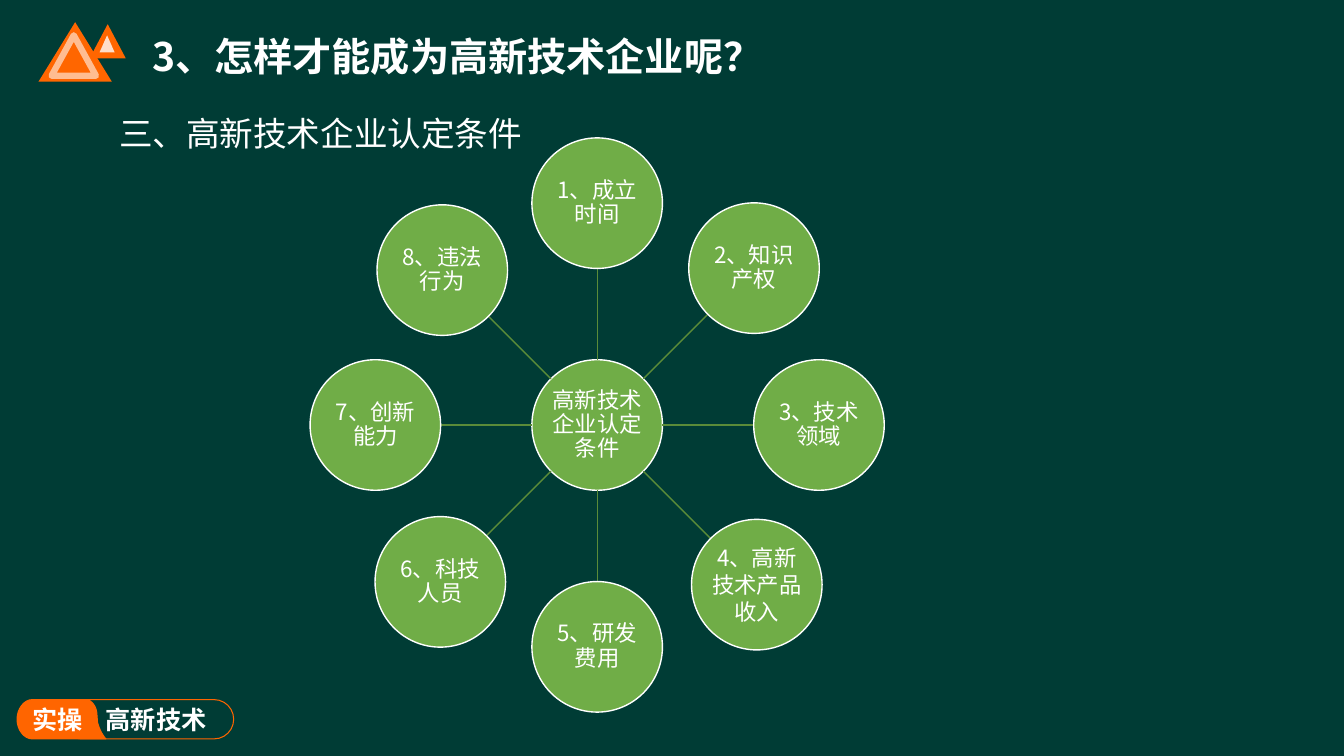
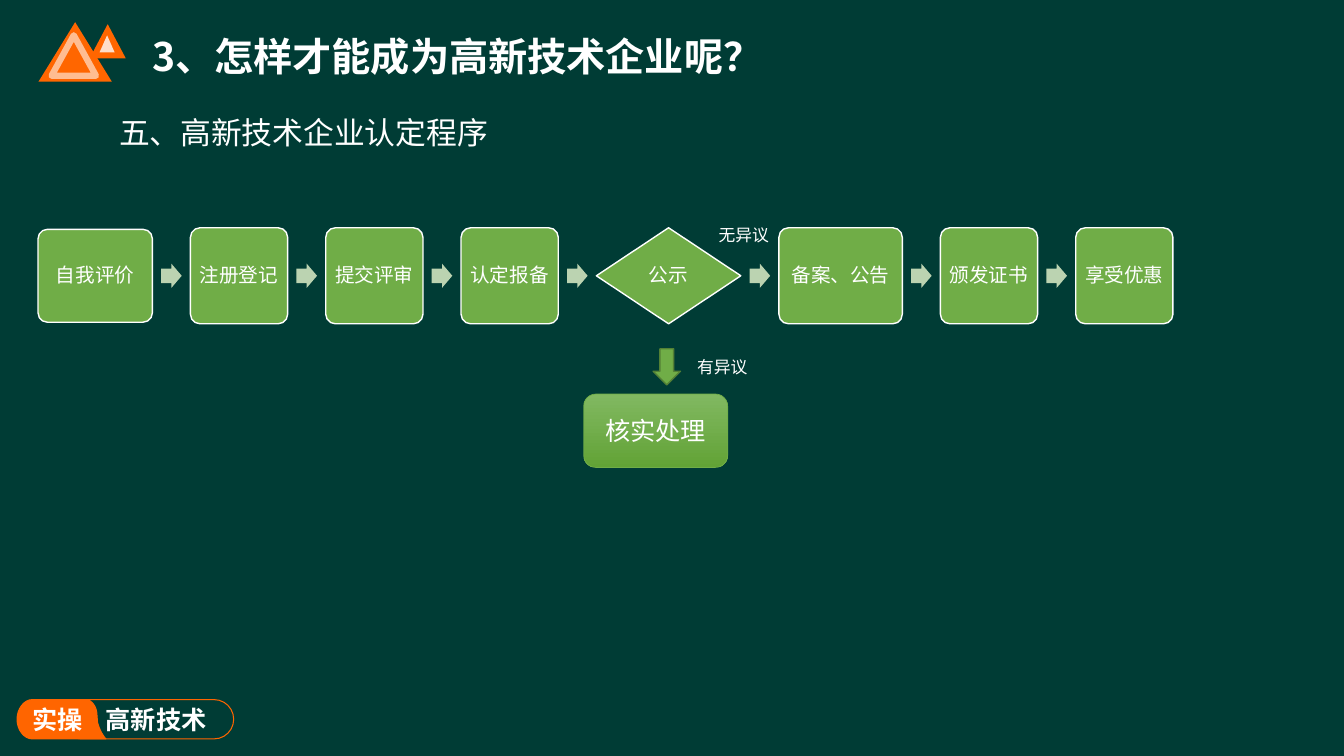
"""Build two slides on the recognition of high-tech enterprises."""
from dataclasses import dataclass
from math import cos, radians, sin

from lxml import etree
from pptx import Presentation
from pptx.dml.color import RGBColor
from pptx.enum.shapes import MSO_CONNECTOR, MSO_SHAPE
from pptx.enum.text import MSO_ANCHOR, MSO_AUTO_SIZE, PP_ALIGN
from pptx.oxml.ns import qn
from pptx.util import Cm, Pt

STRAIGHT = MSO_CONNECTOR.STRAIGHT
TRIANGLE = MSO_SHAPE.FLOWCHART_EXTRACT
ROUNDED = MSO_SHAPE.ROUNDED_RECTANGLE
ELLIPSE = MSO_SHAPE.OVAL
DIAMOND = MSO_SHAPE.DIAMOND
RIGHT_ARROW = MSO_SHAPE.RIGHT_ARROW
DOWN_ARROW = MSO_SHAPE.DOWN_ARROW
MIDDLE, TOP = MSO_ANCHOR.MIDDLE, MSO_ANCHOR.TOP
LEFT, CENTER = PP_ALIGN.LEFT, PP_ALIGN.CENTER
NO_AUTOFIT = MSO_AUTO_SIZE.NONE
TITLE_ONLY = 5


@dataclass(frozen=True)
class Theme:
    """Colours, font and type sizes of the deck."""
    background: str = "003C35"
    white: str = "FFFFFF"
    badge: str = "FF6500"
    emblem: str = "FF6600"
    green: str = "70AD47"
    spoke: str = "5A8B39"
    step_arrow: str = "BBD3B1"
    arrow_edge: str = "538035"
    review_top: str = "81B861"
    review_bottom: str = "62A336"
    font: str = "Noto Sans CJK SC"
    title: int = 28
    badge_text: int = 18
    review_text: int = 18
    condition_text: int = 16
    step_text: int = 14
    note_text: int = 12


@dataclass(frozen=True)
class Box:
    """Position and size in centimetres."""
    left: float
    top: float
    width: float
    height: float


@dataclass(frozen=True)
class Condition:
    """One circle around the hub."""
    label: str
    orbit: float = 5.59
    line_spacing: float = 0.9


@dataclass(frozen=True)
class Step:
    """One stage of the recognition procedure."""
    label: str
    width: float = 2.45
    height: float = 2.42
    outline: MSO_SHAPE = ROUNDED


THEME = Theme()
TITLE = "3、怎样才能成为高新技术企业呢？"
HUB_LABEL = "高新技术企业认定条件"
HUB_X, HUB_Y, CIRCLE = 15.05, 10.71, 3.29
CONDITIONS = (
    Condition("1、成立时间"),
    Condition("2、知识产权"),
    Condition("3、技术领域"),
    Condition("4、高新技术产品收入", 5.69, 1.0),
    Condition("5、研发费用"),
    Condition("6、科技人员"),
    Condition("7、创新能力"),
    Condition("8、违法行为", 5.52),
)
STEPS = (
    Step("自我评价", 2.88, 2.34),
    Step("注册登记"),
    Step("提交评审"),
    Step("认定报备"),
    Step("公示", 3.64, outline=DIAMOND),
    Step("备案、公告", 3.11),
    Step("颁发证书"),
    Step("享受优惠"),
)
STEP_START, STEP_GAP, STEP_MIDDLE = 0.96, 0.96, 6.95
STEP_ARROW_WIDTH, STEP_ARROW_HEIGHT = 0.52, 0.61
BADGE_START = (2.46, 18.21)
BADGE_CURVES = (
    ((2.44, 18.03), (2.46, 17.88), (2.36, 17.75)),
    ((2.31, 17.68), (2.24, 17.63), (2.18, 17.63)),
    ((0.81, 17.63),),
    ((0.61, 17.63), (0.43, 17.86), (0.43, 18.13)),
    ((0.43, 18.39), (0.61, 18.62), (0.81, 18.62)),
    ((2.67, 18.62),),
    ((2.54, 18.47), (2.49, 18.31), (2.46, 18.21)),
)


def rgb(colour: str) -> RGBColor:
    """Turn a hex string into a colour."""
    return RGBColor.from_string(colour)


def paint(shape, fill: str | None, line: str | None = None, width: float = 1) -> None:
    """Set fill and outline and drop the shadow."""
    shape.shadow.inherit = False
    if fill:
        shape.fill.solid()
        shape.fill.fore_color.rgb = rgb(fill)
    else:
        shape.fill.background()
    if line:
        shape.line.color.rgb = rgb(line)
        shape.line.width = Pt(width)
    else:
        shape.line.fill.background()


def set_opacity(element, percent: int) -> None:
    """Make every colour below an XML element translucent."""
    for colour in element.iter(qn("a:srgbClr")):
        etree.SubElement(colour, qn("a:alpha")).set("val", str(percent * 1000))


def write(shape, text: str, size: float, *, bold: bool = False, align=CENTER,
          anchor=MIDDLE, spacing: float = 1.0, margin: float | None = None,
          wrap: bool = True) -> None:
    """Write one formatted paragraph into a shape."""
    frame = shape.text_frame
    frame.text = text
    frame.auto_size = NO_AUTOFIT
    frame.word_wrap = wrap
    frame.vertical_anchor = anchor
    if margin is not None:
        frame.margin_left = frame.margin_right = Cm(margin)
        frame.margin_top = frame.margin_bottom = Cm(margin)
    paragraph = frame.paragraphs[0]
    paragraph.alignment = align
    paragraph.line_spacing = spacing
    run = paragraph.runs[0]
    run.font.size = Pt(size)
    run.font.bold = bold
    run.font.color.rgb = rgb(THEME.white)
    run.font.name = THEME.font
    etree.SubElement(run.font._element, qn("a:ea")).set("typeface", THEME.font)


def place(shape, box: Box) -> None:
    """Move and size a shape."""
    shape.left, shape.top = Cm(box.left), Cm(box.top)
    shape.width, shape.height = Cm(box.width), Cm(box.height)


def add_preset(slide, outline: MSO_SHAPE, box: Box, fill: str | None,
               line: str | None = None, width: float = 1):
    """Add a painted preset shape."""
    shape = slide.shapes.add_shape(
        outline, Cm(box.left), Cm(box.top), Cm(box.width), Cm(box.height))
    paint(shape, fill, line, width)
    return shape


def add_label(slide, box: Box, text: str, size: float, **style) -> None:
    """Add a left-aligned text box."""
    label = slide.shapes.add_textbox(
        Cm(box.left), Cm(box.top), Cm(box.width), Cm(box.height))
    write(label, text, size, align=LEFT, **style)


def badge_points(samples: int = 8) -> list[tuple[int, int]]:
    """Trace the badge outline, sampling its cubic curves."""
    points, start = [], BADGE_START
    for curve in BADGE_CURVES:
        if len(curve) == 1:
            points.append(curve[0])
        else:
            for step in range(1, samples + 1):
                t = step / samples
                weights = ((1 - t) ** 3, 3 * t * (1 - t) ** 2, 3 * t * t * (1 - t), t ** 3)
                points.append(tuple(
                    sum(weight * point[axis] for weight, point in zip(weights, (start, *curve)))
                    for axis in (0, 1)))
        start = curve[-1]
    return [(Cm(x), Cm(y)) for x, y in points]


def draw_badge(slide) -> None:
    """Draw the topic badge at the bottom left."""
    builder = slide.shapes.build_freeform(*(Cm(value) for value in BADGE_START))
    builder.add_line_segments(badge_points(), close=True)
    paint(builder.convert_to_shape(), THEME.badge, THEME.badge, 0.75)
    pill = add_preset(slide, ROUNDED, Box(1.55, 17.63, 4.34, 0.99), None, THEME.badge, 0.75)
    pill.adjustments[0] = 0.5
    write(pill, "高新技术", THEME.badge_text, bold=True, align=LEFT, margin=0)
    pill.text_frame.margin_left = Cm(0.97)
    add_label(slide, Box(0.56, 17.63, 1.8, 1.02), "实操", THEME.badge_text,
              bold=True, wrap=False)


def draw_emblem(slide) -> None:
    """Draw the triangles beside the title."""
    add_preset(slide, TRIANGLE, Box(0.97, 0.56, 1.85, 1.5), THEME.emblem)
    add_preset(slide, TRIANGLE, Box(2.26, 0.61, 0.91, 0.86), THEME.emblem)
    ring = add_preset(slide, TRIANGLE, Box(1.3, 0.89, 1.12, 1.02),
                      THEME.emblem, THEME.white, 4.5)
    set_opacity(ring.element.spPr.find(qn("a:ln")), 57)
    peak = add_preset(slide, TRIANGLE, Box(2.51, 0.89, 0.38, 0.43), THEME.white)
    set_opacity(peak.element.spPr, 79)


def add_topic_slide(deck, subtitle: str, subtitle_size: int):
    """Add a slide with title, emblem, badge and subtitle."""
    slide = deck.slides.add_slide(deck.slide_layouts[TITLE_ONLY])
    draw_badge(slide)
    draw_emblem(slide)
    title = slide.shapes.title
    place(title, Box(3.58, 0.46, 23.32, 1.88))
    write(title, TITLE, THEME.title, bold=True, align=LEFT)
    add_label(slide, Box(2.75, 2.73, 24, 1.6), subtitle, subtitle_size, anchor=TOP)
    return slide


def draw_circle(slide, x: float, y: float, label: str, spacing: float) -> None:
    """Draw a labelled circle around a centre."""
    box = Box(x - CIRCLE / 2, y - CIRCLE / 2, CIRCLE, CIRCLE)
    circle = add_preset(slide, ELLIPSE, box, THEME.green, THEME.white)
    write(circle, label, THEME.condition_text, spacing=spacing, margin=0.02)


def draw_spoke(slide, angle: float, orbit: float) -> None:
    """Join the rims of the hub and a circle."""
    ends = [Cm(centre + reach * turn)
            for reach in (CIRCLE / 2, orbit - CIRCLE / 2)
            for centre, turn in ((HUB_X, cos(angle)), (HUB_Y, sin(angle)))]
    spoke = slide.shapes.add_connector(STRAIGHT, *ends)
    spoke.line.color.rgb = rgb(THEME.spoke)
    spoke.line.width = Pt(1)
    etree.SubElement(spoke.element.spPr, qn("a:effectLst"))


def draw_conditions(slide) -> None:
    """Draw the hub and its ring of conditions."""
    draw_circle(slide, HUB_X, HUB_Y, HUB_LABEL, 0.9)
    for index, condition in enumerate(CONDITIONS):
        angle = radians(index * 360 / len(CONDITIONS) - 90)
        draw_spoke(slide, angle, condition.orbit)
        draw_circle(slide, HUB_X + condition.orbit * cos(angle),
                    HUB_Y + condition.orbit * sin(angle),
                    condition.label, condition.line_spacing)


def draw_procedure(slide) -> None:
    """Draw the row of steps with arrows in the gaps."""
    left = STEP_START
    for index, step in enumerate(STEPS):
        if index:
            arrow = add_preset(slide, RIGHT_ARROW, Box(
                left - (STEP_GAP + STEP_ARROW_WIDTH) / 2, STEP_MIDDLE - STEP_ARROW_HEIGHT / 2,
                STEP_ARROW_WIDTH, STEP_ARROW_HEIGHT), THEME.step_arrow)
            arrow.adjustments[0] = 0.6
        box = Box(left, STEP_MIDDLE - step.height / 2, step.width, step.height)
        stage = add_preset(slide, step.outline, box, THEME.green, THEME.white)
        if step.outline == ROUNDED:
            stage.adjustments[0] = 0.1
        write(stage, step.label, THEME.step_text, spacing=0.9, margin=0.05)
        left += step.width + STEP_GAP


def draw_review(slide) -> None:
    """Draw the branch taken when an objection is raised."""
    add_preset(slide, DOWN_ARROW, Box(16.46, 8.79, 0.69, 0.91), THEME.green, THEME.arrow_edge)
    add_label(slide, Box(17.32, 8.51, 2.01, 1.47), "有异议", THEME.note_text)
    add_label(slide, Box(17.86, 5.18, 2.01, 1.47), "无异议", THEME.note_text)
    review = add_preset(slide, ROUNDED, Box(14.71, 9.93, 3.63, 1.85),
                        THEME.green, THEME.green, 0.5)
    review.fill.gradient()
    review.fill.gradient_angle = 270
    for stop, colour in zip(review.fill.gradient_stops, (THEME.review_top, THEME.review_bottom)):
        stop.color.rgb = rgb(colour)
    write(review, "核实处理", THEME.review_text)


def main() -> None:
    """Build and save the deck."""
    deck = Presentation()
    deck.slide_width, deck.slide_height = Cm(33.87), Cm(19.05)
    backdrop = deck.slide_master.background.fill
    backdrop.solid()
    backdrop.fore_color.rgb = rgb(THEME.background)
    draw_conditions(add_topic_slide(deck, "三、高新技术企业认定条件", 24))
    procedure = add_topic_slide(deck, "五、高新技术企业认定程序", 22)
    draw_procedure(procedure)
    draw_review(procedure)
    deck.save("out.pptx")


if __name__ == "__main__":
    main()
